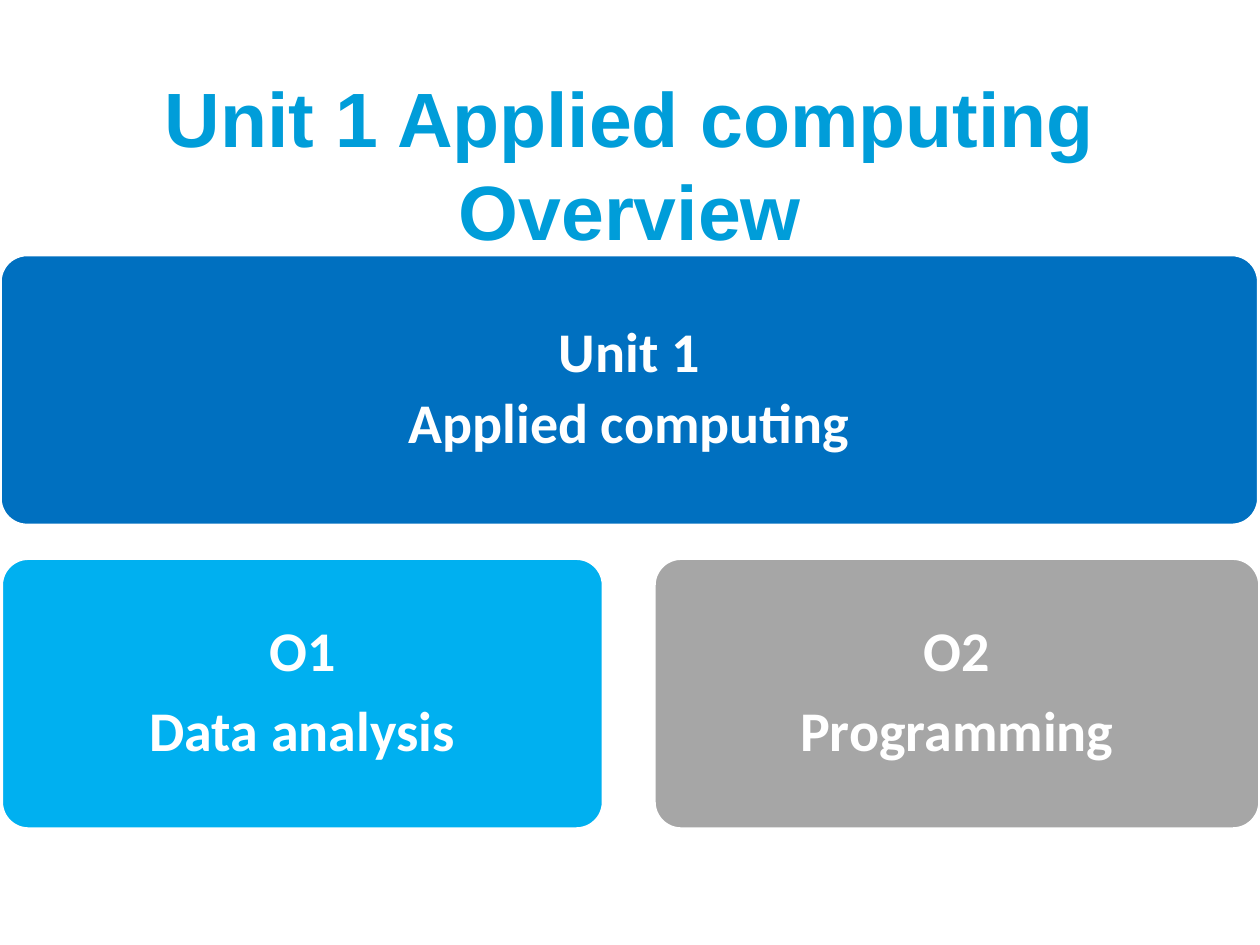
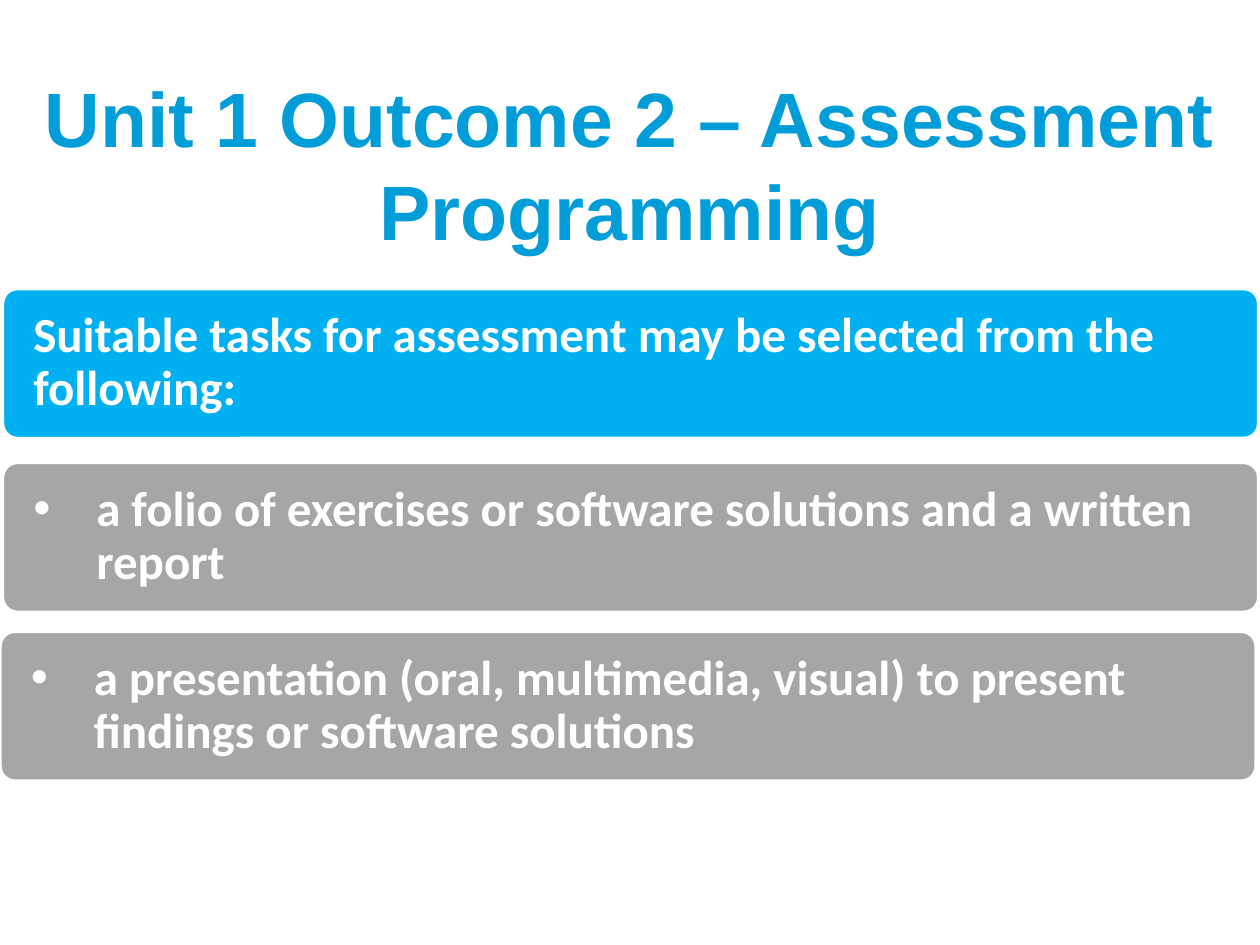
from lxml import etree
from pptx import Presentation
from pptx.dml.color import RGBColor
from pptx.enum.shapes import MSO_SHAPE
from pptx.enum.text import MSO_ANCHOR, PP_ALIGN
from pptx.oxml.ns import qn
from pptx.util import Inches, Pt

ROUNDED = MSO_SHAPE.ROUNDED_RECTANGLE
MIDDLE = MSO_ANCHOR.MIDDLE
LEFT, CENTER = PP_ALIGN.LEFT, PP_ALIGN.CENTER

COLORS = {
    "title": "009DD9",
    "unit": "0070C0",
    "highlight": "00B0F0",
    "neutral": "A6A6A6",
    "white": "FFFFFF",
}
BLANK_LAYOUT = 6


def rgb(name):
    return RGBColor.from_string(COLORS[name])


def add_bullet(paragraph, indent):
    properties = paragraph._p.get_or_add_pPr()
    properties.set("marL", str(Inches(indent)))
    properties.set("indent", str(-Inches(indent)))
    etree.SubElement(properties, qn("a:buFont")).set("typeface", "Arial")
    etree.SubElement(properties, qn("a:buChar")).set("char", "•")


def write_text(frame, text, size, font="Calibri", color="white", align=CENTER,
               insets=(0.1, 0.05), line_spacing=None, space_after=0,
               bullet=False):
    """Fill a frame: a newline starts a paragraph, a vertical tab breaks a line."""
    frame.word_wrap = True
    frame.vertical_anchor = MIDDLE
    frame.margin_left = frame.margin_right = Inches(insets[0])
    frame.margin_top = frame.margin_bottom = Inches(insets[1])
    frame.text = text
    for paragraph in frame.paragraphs:
        paragraph.alignment = align
        paragraph.space_after = Pt(space_after)
        if line_spacing:
            paragraph.line_spacing = line_spacing
        if bullet:
            add_bullet(paragraph, 0.5)
        for run in paragraph.runs:
            run.font.name = font
            run.font.size = Pt(size)
            run.font.bold = True
            run.font.color.rgb = rgb(color)
        # A line break needs the text size too, or the line height differs
        for line_break in paragraph._p.findall(qn("a:br")):
            etree.SubElement(line_break, qn("a:rPr")).set("sz", str(size * 100))


class Deck:
    def __init__(self):
        self.presentation = Presentation()
        self.presentation.slide_width = Inches(10)
        self.presentation.slide_height = Inches(7.5)
        self.slide = None

    def add_slide(self, title, title_left=0.0):
        layout = self.presentation.slide_layouts[BLANK_LAYOUT]
        self.slide = self.presentation.slides.add_slide(layout)
        box = self.slide.shapes.add_textbox(
            Inches(title_left), Inches(0.67),
            Inches(10 - 2 * title_left), Inches(1.25))
        write_text(box.text_frame, title, 44, font="Arial", color="title")

    def add_card(self, text, left, top, width, height, fill, **text_format):
        card = self.slide.shapes.add_shape(
            ROUNDED, Inches(left), Inches(top), Inches(width), Inches(height))
        card.adjustments[0] = 0.1
        card.shadow.inherit = False
        card.fill.solid()
        card.fill.fore_color.rgb = rgb(fill)
        card.line.color.rgb = rgb("white")
        card.line.width = Pt(2)
        write_text(card.text_frame, text, line_spacing=0.9, **text_format)

    def add_outcome_card(self, text, left, top, width, fill, space_after=11):
        self.add_card(text, left, top, width, 2.15, fill, size=32,
                      insets=(0.13, 0.13), space_after=space_after)

    def add_task_card(self, text, left, top, fill, bullet=True, space_after=6):
        self.add_card(text, left, top, 9.97, 1.19, fill, size=28, align=LEFT,
                      insets=(0.21, 0.1), bullet=bullet,
                      space_after=space_after)


def build_overview(deck):
    deck.add_slide("Unit 1 Applied computing\vOverview", title_left=0.75)
    deck.add_outcome_card("Unit 1\nApplied computing", 0, 2.02, 9.99, "unit",
                          space_after=6)
    outcomes = (
        ("O1\nData analysis", 0.01, 4.78, "highlight"),
        ("O2\nProgramming", 5.19, 4.81, "neutral"),
    )
    for text, left, width, fill in outcomes:
        deck.add_outcome_card(text, left, 4.43, width, fill)


def build_assessment(deck):
    deck.add_slide("Unit 1 Outcome 2 – Assessment\vProgramming")
    deck.add_task_card(
        "Suitable tasks for assessment may be selected from the following:",
        0.02, 2.29, "highlight", bullet=False, space_after=10)
    tasks = (
        ("a folio of exercises or software solutions and a written report",
         0.02, 3.67),
        ("a presentation (oral, multimedia, visual) to present findings or "
         "software solutions", 0, 5.01),
    )
    for text, left, top in tasks:
        deck.add_task_card(text, left, top, "neutral")


def main():
    deck = Deck()
    build_overview(deck)
    build_assessment(deck)
    deck.presentation.save("out.pptx")


if __name__ == "__main__":
    main()
